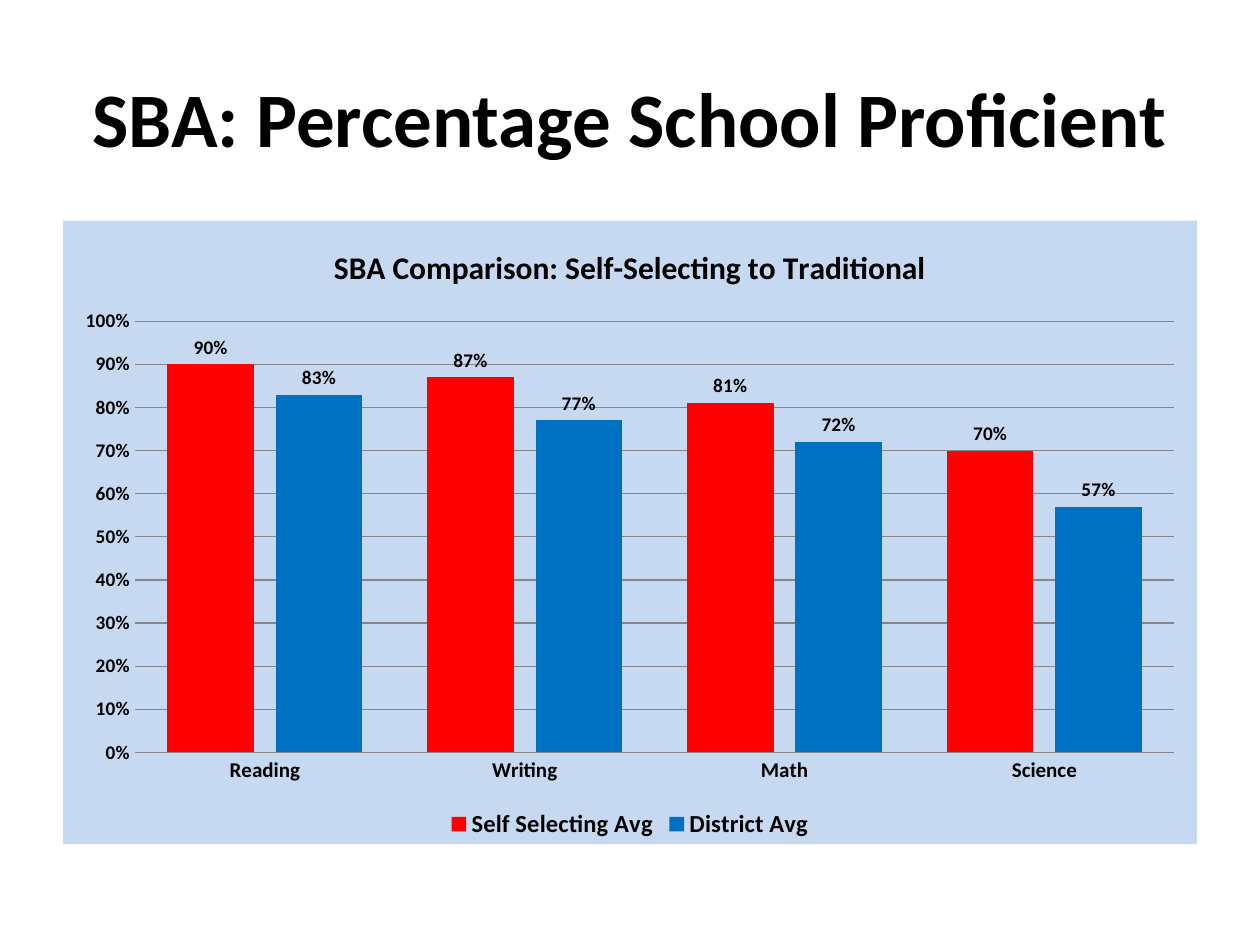
from lxml import etree
from pptx import Presentation
from pptx import util as u
from pptx.chart.data import CategoryChartData
from pptx.dml.color import RGBColor
from pptx.enum import chart as charts, text
from pptx.oxml import ns, parse_xml

COLOURS = {"ink": "000000", "panel": "C6D9F1", "grid": "868686",
           "selecting": "FF0000", "district": "0070C0"}
SUBJECTS = ["Reading", "Writing", "Math", "Science"]
SERIES = [("Self Selecting Avg", "selecting", [0.90, 0.87, 0.81, 0.70]),
          ("District Avg", "district", [0.83, 0.77, 0.72, 0.57])]


def colour(name):
    return RGBColor.from_string(COLOURS[name])


def style_font(font, size, bold=True, ink="ink", name="Calibri"):
    font.name, font.size, font.bold = name, u.Pt(size), bold
    font.color.rgb = colour(ink)


def write_text(frame, words, align=text.PP_ALIGN.CENTER, **style):
    para = frame.paragraphs[0]
    para.alignment = align
    span = para.add_run()
    span.text = words
    style_font(span.font, **style)


class SlideBuilder:
    def __init__(self, deck):
        self.page = deck.slides.add_slide(deck.slide_layouts[6])

    def add_title(self, words, left, top, width, height):
        box = self.page.shapes.add_textbox(left, top, width, height)
        frame = box.text_frame
        frame.word_wrap = True
        frame.vertical_anchor = text.MSO_ANCHOR.MIDDLE
        write_text(frame, words, size=44)

    def add_column_chart(self, title, left, top, width, height):
        data = CategoryChartData(number_format="0%")
        data.categories = SUBJECTS
        for name, _, values in SERIES:
            data.add_series(name, values)
        chart = self.page.shapes.add_chart(
            charts.XL_CHART_TYPE.COLUMN_CLUSTERED, left, top, width, height, data).chart
        style_font(chart.font, 10, bold=False)
        self.fill_chart(chart)
        chart.has_title = True
        write_text(chart.chart_title.text_frame, title, size=18)
        chart.chart_title.include_in_layout = False
        chart.has_legend = True
        chart.legend.position = charts.XL_LEGEND_POSITION.BOTTOM
        chart.legend.include_in_layout = False
        style_font(chart.legend.font, 14)
        self.style_axes(chart)
        self.style_columns(chart.plots[0])

    def fill_chart(self, chart):
        panel = parse_xml(
            f'<c:spPr {ns.nsdecls("c", "a")}><a:solidFill>'
            f'<a:srgbClr val="{COLOURS["panel"]}"/></a:solidFill>'
            '<a:ln><a:noFill/></a:ln></c:spPr>')
        chart.element.find(ns.qn("c:chart")).addnext(panel)

    def style_axes(self, chart):
        subjects, percent = chart.category_axis, chart.value_axis
        for axis, size in ((subjects, 12), (percent, 11)):
            axis.major_tick_mark = charts.XL_TICK_MARK.NONE
            axis.minor_tick_mark = charts.XL_TICK_MARK.NONE
            style_font(axis.tick_labels.font, size)
        percent.minimum_scale, percent.maximum_scale = 0, 1
        percent.major_unit = 0.1
        percent.tick_labels.number_format = "0%"
        percent.tick_labels.number_format_is_linked = False
        percent.format.line.fill.background()
        percent.has_major_gridlines = True
        for line in (subjects.format.line, percent.major_gridlines.format.line):
            line.color.rgb = colour("grid")
            line.width = u.Pt(0.75)

    def style_columns(self, plot):
        plot.gap_width, plot.overlap = 75, -25
        plot.vary_by_categories = False
        for series, (_, fill, _) in zip(plot.series, SERIES):
            series.format.fill.solid()
            series.format.fill.fore_color.rgb = colour(fill)
            labels = series.data_labels
            labels.show_value = True
            labels.number_format = "0%"
            labels.number_format_is_linked = False
            labels.position = charts.XL_LABEL_POSITION.OUTSIDE_END
            style_font(labels.font, 11)


def main():
    deck = Presentation()
    deck.slide_width, deck.slide_height = u.Cm(25.4), u.Cm(19.05)
    margin, width = u.Cm(1.27), u.Cm(22.86)
    builder = SlideBuilder(deck)
    builder.add_title("SBA: Percentage School Proficient",
                      margin, u.Cm(0.76), width, u.Cm(3.18))
    builder.add_column_chart("SBA Comparison: Self-Selecting to Traditional",
                             margin, u.Cm(4.45), width, u.Cm(12.57))
    deck.save("out.pptx")


if __name__ == "__main__":
    main()
